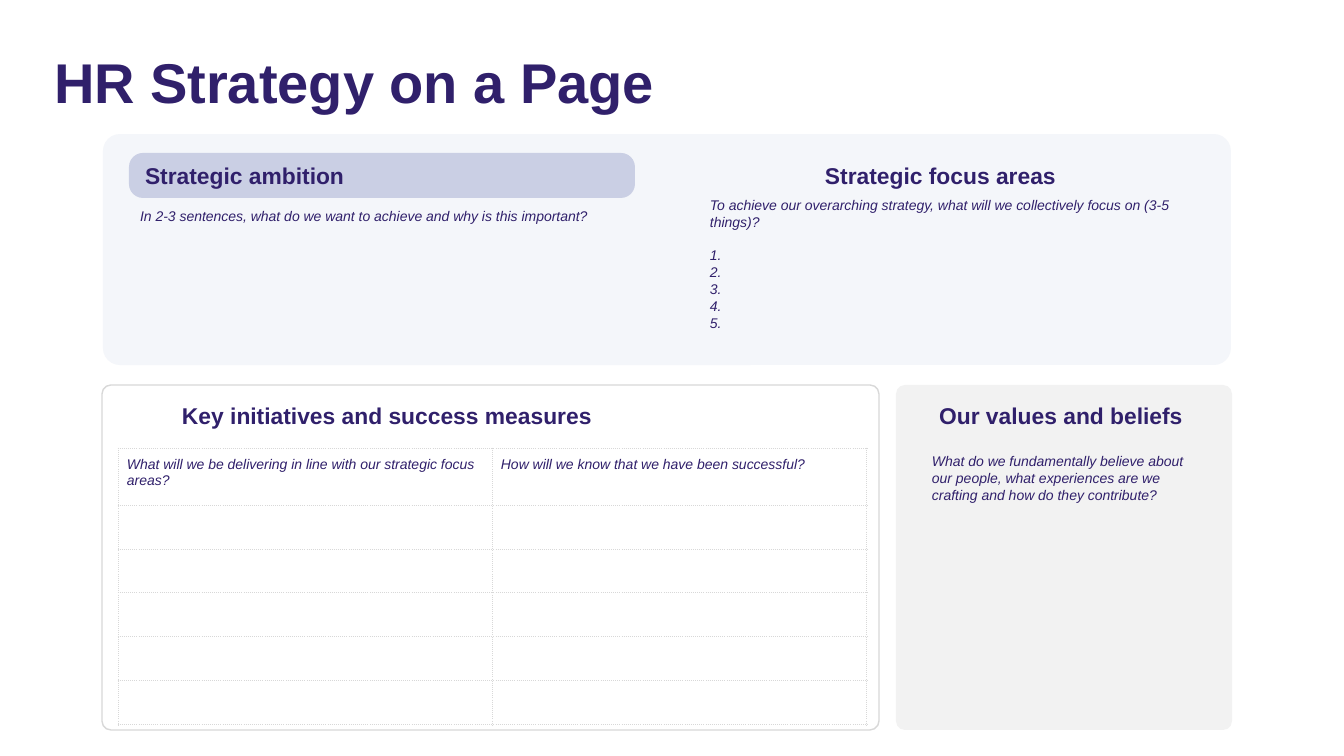
from dataclasses import dataclass
from lxml.etree import SubElement as Sub
from pptx import Presentation
from pptx.dml.color import RGBColor as Color
from pptx.enum.shapes import MSO_SHAPE as Shape
from pptx.enum.text import MSO_ANCHOR as Anchor, PP_ALIGN as Align
from pptx.oxml.ns import qn
from pptx.util import Pt


@dataclass(frozen=True)
class Theme:
    font: str = "Arial"
    ink: str = "30206B"
    pale: str = "F4F6FA"
    bar: str = "CACFE4"
    white: str = "FFFFFF"
    gray: str = "F2F2F2"
    rule: str = "D8D8D8"
    title: float = 40
    head: float = 16.3
    note: float = 10


THEME = Theme()
TITLE = ("HR Strategy on a Page", (54, 52, 1237, 67))

PANELS = [
    ((103, 134, 1128, 231), 17, THEME.pale, None),
    ((129, 153, 506, 45), 14, THEME.bar, None),
    ((102, 385, 777, 345), 9, THEME.white, THEME.rule),
    ((896, 385, 336, 345), 9, THEME.gray, None),
]

HEADS = [
    ("Strategic ambition", (145, 158, 483, 26), Align.LEFT),
    ("Strategic focus areas", (673, 158, 535, 26), Align.CENTER),
    ("Key initiatives and success measures", (182, 398, 640, 26), Align.LEFT),
    ("Our values and beliefs", (896, 398, 330, 26), Align.CENTER),
]

NOTES = [
    (["In 2-3 sentences, what do we want to achieve and why is this important?"],
     (140, 205, 495, 160), 1.13, 4.5),
    (["To achieve our overarching strategy, what will we collectively focus on (3-5 things)?",
      "1.", "2.", "3.", "4.", "5."],
     (710, 197, 495, 160), 1, 11.5),
    (["What do we fundamentally believe about our people, what experiences are we "
      "crafting and how do they contribute?"],
     (932, 453, 262, 52), 1, 0),
]

ASKS = [
    "What will we be delivering in line with our strategic focus areas?",
    "How will we know that we have been successful?",
]
GRID = (118, 448)
COLS = [374, 375]
ROWS = [57] + [44] * 5
INSET = 9


def px(n):
    return round(n * 914400 / 100.8)


def place(box):
    return [px(n) for n in box]


def style(par, size, bold=False, slant=False):
    for run in par.runs:
        font = run.font
        font.name, font.size = THEME.font, Pt(size)
        font.bold, font.italic = bold, slant
        font.color.rgb = Color.from_string(THEME.ink)


def clear(frame):
    frame.word_wrap = True
    frame.margin_left = frame.margin_right = 0
    frame.margin_top = frame.margin_bottom = 0


def add_text(slide, lines, box):
    frame = slide.shapes.add_textbox(*place(box)).text_frame
    clear(frame)
    frame.text = "\n".join(lines)
    return frame.paragraphs


def add_title(slide):
    text, box = TITLE
    title = slide.shapes.title
    title.left, title.top, title.width, title.height = place(box)
    frame = title.text_frame
    clear(frame)
    frame.text = text
    frame.vertical_anchor = Anchor.MIDDLE
    par = frame.paragraphs[0]
    par.alignment, par.line_spacing = Align.LEFT, 0.9
    style(par, THEME.title, bold=True)


def add_panel(slide, box, curve, fill, edge):
    panel = slide.shapes.add_shape(Shape.ROUNDED_RECTANGLE, *place(box))
    panel.adjustments[0] = curve / min(box[2:])
    panel.shadow.inherit = False
    panel.fill.solid()
    panel.fill.fore_color.rgb = Color.from_string(fill)
    if edge:
        panel.line.color.rgb = Color.from_string(edge)
        panel.line.width = Pt(1)
    else:
        panel.line.fill.background()


def add_edges(cell):
    props = cell._tc.get_or_add_tcPr()
    for side in ("lnL", "lnR", "lnT", "lnB"):
        edge = Sub(props, qn("a:" + side), w=str(Pt(0.75)))
        fill = Sub(edge, qn("a:solidFill"))
        Sub(fill, qn("a:srgbClr"), val=THEME.rule)
        Sub(edge, qn("a:prstDash"), val="sysDot")


def add_grid(slide):
    box = (*GRID, sum(COLS), sum(ROWS))
    table = slide.shapes.add_table(len(ROWS), len(COLS), *place(box)).table
    table.first_row = table.horz_banding = False
    for col, width in zip(table.columns, COLS):
        col.width = px(width)
    for row, height in zip(table.rows, ROWS):
        row.height = px(height)
    for cell in table.iter_cells():
        add_edges(cell)
        cell.fill.background()
    for cell, ask in zip(table.rows[0].cells, ASKS):
        cell.margin_left = cell.margin_right = px(INSET)
        cell.margin_top = cell.margin_bottom = px(INSET)
        cell.text = ask
        style(cell.text_frame.paragraphs[0], THEME.note, slant=True)


def main():
    deck = Presentation()
    deck.slide_width, deck.slide_height = px(1344), px(756)
    slide = deck.slides.add_slide(deck.slide_layouts[5])
    add_title(slide)
    for panel in PANELS:
        add_panel(slide, *panel)
    for text, box, align in HEADS:
        par = add_text(slide, [text], box)[0]
        par.alignment, par.line_spacing = align, 1.13
        par.space_after = Pt(10)
        style(par, THEME.head, bold=True)
    for lines, box, pitch, gap in NOTES:
        pars = add_text(slide, lines, box)
        pars[0].space_after = Pt(gap)
        for par in pars:
            par.line_spacing = pitch
            style(par, THEME.note, slant=True)
    add_grid(slide)
    deck.save("out.pptx")


if __name__ == "__main__":
    main()
